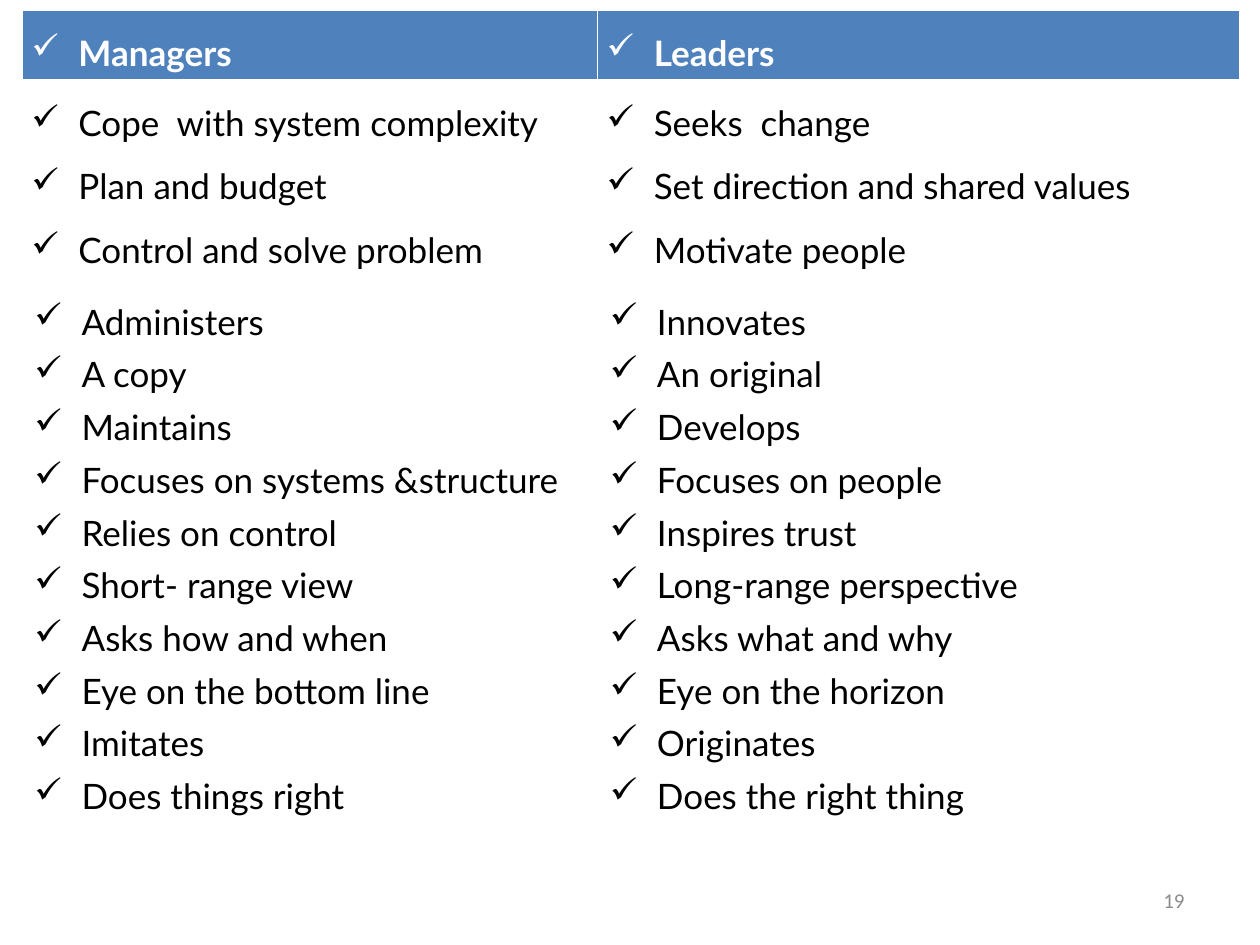
import pptx
import pptx.util
import pptx.dml.color
import pptx.enum.text
import pptx.oxml.ns
import lxml.etree

Cm, Pt = pptx.util.Cm, pptx.util.Pt
Align = pptx.enum.text.PP_ALIGN


class Theme:
    white = "FFFFFF"
    black = "000000"
    blue = "4F81BD"
    gray = "8C8C8C"
    font = "Lato"
    small = "Calibri"
    body = 20
    note = 12
    mark = "✓"
    indent = Cm(0.95)


class Deck:
    def __init__(self, theme):
        self.theme = theme
        self.prs = pptx.Presentation()
        self.prs.slide_width, self.prs.slide_height = Cm(25.4), Cm(19.05)
        self.slide = self.prs.slides.add_slide(self.prs.slide_layouts[6])

    def color(self, code):
        return pptx.dml.color.RGBColor.from_string(code)

    def add(self, parent, tag, **attrs):
        item = lxml.etree.SubElement(parent, pptx.oxml.ns.qn(tag))
        for key, value in attrs.items():
            item.set(key, str(value))
        return item

    def style(self, para, font, size, code, bold=False):
        for run in para.runs:
            run.font.name, run.font.size = font, Pt(size)
            run.font.bold = bold
            run.font.color.rgb = self.color(code)

    def bullet(self, para):
        props = para._p.get_or_add_pPr()
        props.set("marL", str(self.theme.indent))
        props.set("indent", str(-self.theme.indent))
        self.add(props, "a:buChar", char=self.theme.mark)

    def border(self, cell, base):
        props = cell._tc.get_or_add_tcPr()
        for side, width in zip("LRTB", (1, 1, 1, base)):
            line = self.add(props, f"a:ln{side}", w=Pt(width))
            fill = self.add(line, "a:solidFill")
            self.add(fill, "a:srgbClr", val=self.theme.white)

    def cell(self, cell, lines, head=False, loose=False):
        theme = self.theme
        self.border(cell, 3 if head else 1)
        cell.fill.solid()
        cell.fill.fore_color.rgb = self.color(theme.blue if head else theme.white)
        if loose:
            cell.margin_left = cell.margin_right = Cm(0.19)
            cell.margin_top = cell.margin_bottom = 0
        cell.text_frame.text = "\n".join(lines)
        for index, para in enumerate(cell.text_frame.paragraphs):
            self.bullet(para)
            if loose:
                para.alignment = Align.JUSTIFY
                para.line_spacing = 1.5
            elif index:
                para.space_before = Pt(6)
            self.style(para, theme.font, theme.body,
                       theme.white if head else theme.black, head)

    def table(self, box, cols, rows, data):
        grid = self.slide.shapes.add_table(len(rows), len(cols), *map(Cm, box)).table
        grid.first_row = grid.horz_banding = False
        for col, width in zip(grid.columns, cols):
            col.width = Cm(width)
        for row, height in zip(grid.rows, rows):
            row.height = Cm(height)
        for r, line in enumerate(data):
            for c, texts in enumerate(line):
                self.cell(grid.cell(r, c), texts, head=r == 0, loose=r < 2)

    def number(self, box, text):
        frame = self.slide.shapes.add_textbox(*map(Cm, box)).text_frame
        frame.word_wrap = True
        frame.vertical_anchor = pptx.enum.text.MSO_ANCHOR.MIDDLE
        frame.text = text
        para = frame.paragraphs[0]
        para.alignment = Align.RIGHT
        self.style(para, self.theme.small, self.theme.note, self.theme.gray)


def main():
    deck = Deck(Theme)

    # Wording: one row of the table per entry, managers then leaders
    data = [
        (["Managers"], ["Leaders"]),
        (["Cope  with system complexity", "Plan and budget",
          "Control and solve problem"],
         ["Seeks  change", "Set direction and shared values",
          "Motivate people"]),
        (["Administers", "A copy", "Maintains", "Focuses on systems &structure",
          "Relies on control", "Short- range view", "Asks how and when",
          "Eye on the bottom line", "Imitates", "Does things right"],
         ["Innovates", "An original", "Develops", "Focuses on people",
          "Inspires trust", "Long-range perspective", "Asks what and why",
          "Eye on the horizon", "Originates", "Does the right thing"]),
    ]

    # Comparison table
    cols, rows = (11.6, 12.95), (1.42, 4.3, 14.17)
    deck.table((0.44, 0.21, sum(cols), sum(rows)), cols, rows, data)

    # Slide number
    deck.number((18.2, 17.65, 5.93, 1.01), "19")

    deck.prs.save("out.pptx")


if __name__ == "__main__":
    main()
